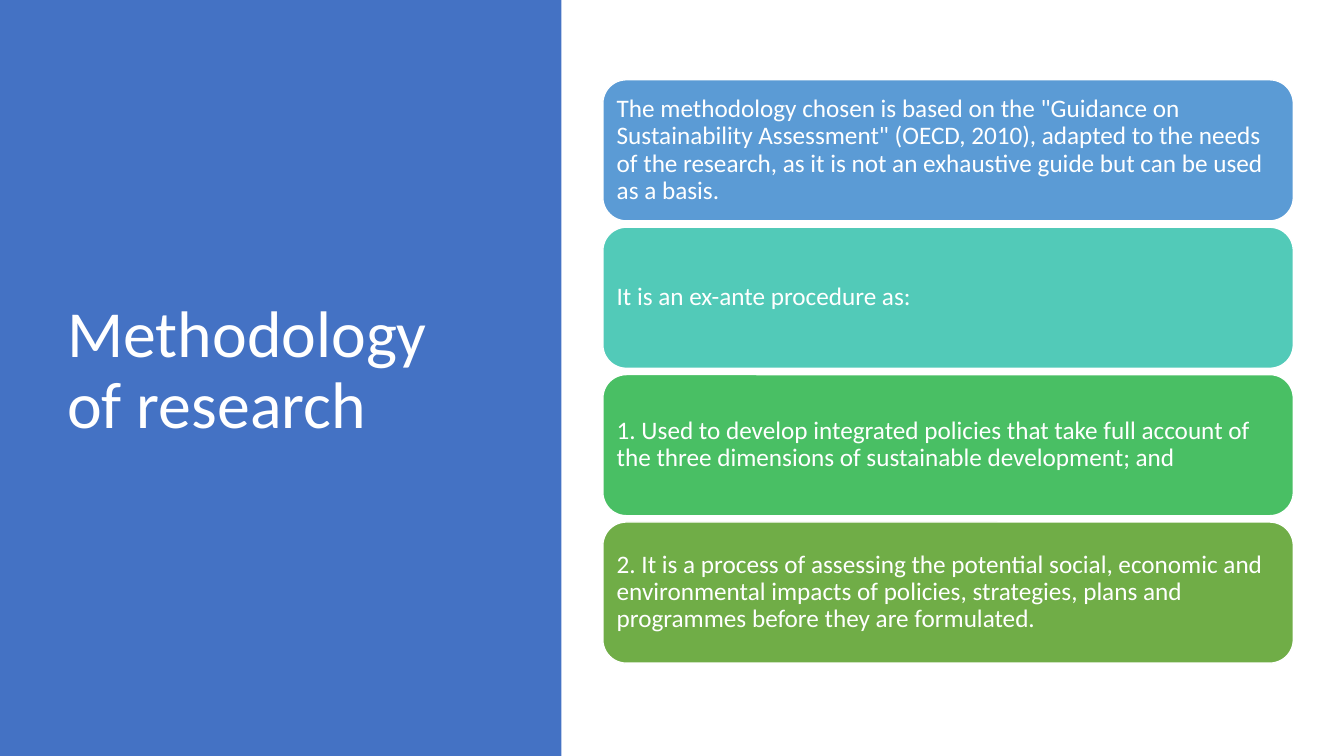
from dataclasses import dataclass

from pptx import Presentation
from pptx.dml.color import RGBColor
from pptx.enum.shapes import MSO_SHAPE as Shape
from pptx.enum.text import MSO_ANCHOR as Anchor, PP_ALIGN as Align
from pptx.util import Pt


@dataclass(frozen=True)
class Theme:
    font: str = "Calibri"
    title_size: int = 47
    body_size: int = 18
    white: str = "FFFFFF"
    panel: str = "4472C4"
    blue: str = "5B9BD5"
    teal: str = "52CAB8"
    green: str = "49BF64"
    olive: str = "70AD47"


theme = Theme()


def add_block(page, kind, left, top, width, height, color):
    block = page.shapes.add_shape(kind, Pt(left), Pt(top), Pt(width), Pt(height))
    block.shadow.inherit = False
    block.fill.solid()
    block.fill.fore_color.rgb = RGBColor.from_string(color)
    block.line.fill.background()
    return block


def write_text(box, words, size):
    """Fill a box with one white, left-aligned, vertically centred paragraph."""
    frame = box.text_frame
    frame.word_wrap = True
    frame.vertical_anchor = Anchor.MIDDLE
    para = frame.paragraphs[0]
    para.alignment = Align.LEFT
    para.line_spacing = 0.9
    span = para.add_run()
    span.text = words
    span.font.name = theme.font
    span.font.size = Pt(size)
    span.font.color.rgb = RGBColor.from_string(theme.white)


deck = Presentation()
deck.slide_width, deck.slide_height = Pt(960), Pt(540)
page = deck.slides.add_slide(deck.slide_layouts[6])

# Title panel
add_block(page, Shape.RECTANGLE, 0, 0, 401, 540, theme.panel)
title = page.shapes.add_textbox(Pt(41), Pt(49), Pt(299.5), Pt(433.5))
write_text(title, "Methodology of research", theme.title_size)

# Stack of methodology cards
cards = [
    (theme.blue, 'The methodology chosen is based on the "Guidance on Sustainability '
                 'Assessment" (OECD, 2010), adapted to the needs of the research, as it '
                 'is not an exhaustive guide but can be used as a basis.'),
    (theme.teal, "It is an ex-ante procedure as:"),
    (theme.green, "1. Used to develop integrated policies that take full account of the "
                  "three dimensions of sustainable development; and"),
    (theme.olive, "2. It is a process of assessing the potential social, economic and "
                  "environmental impacts of policies, strategies, plans and programmes "
                  "before they are formulated."),
]
card_top, card_height, card_gap = 57, 100.8, 4.5
card_inset = Pt(5)

for index, (color, words) in enumerate(cards):
    top = card_top + index * (card_height + card_gap)
    card = add_block(page, Shape.ROUNDED_RECTANGLE, 430.6, top, 493.2, card_height, color)
    card.line.color.rgb = RGBColor.from_string(theme.white)
    card.line.width = Pt(1)
    frame = card.text_frame
    frame.margin_left = frame.margin_right = card_inset
    frame.margin_top = frame.margin_bottom = card_inset
    write_text(card, words, theme.body_size)

deck.save("out.pptx")
